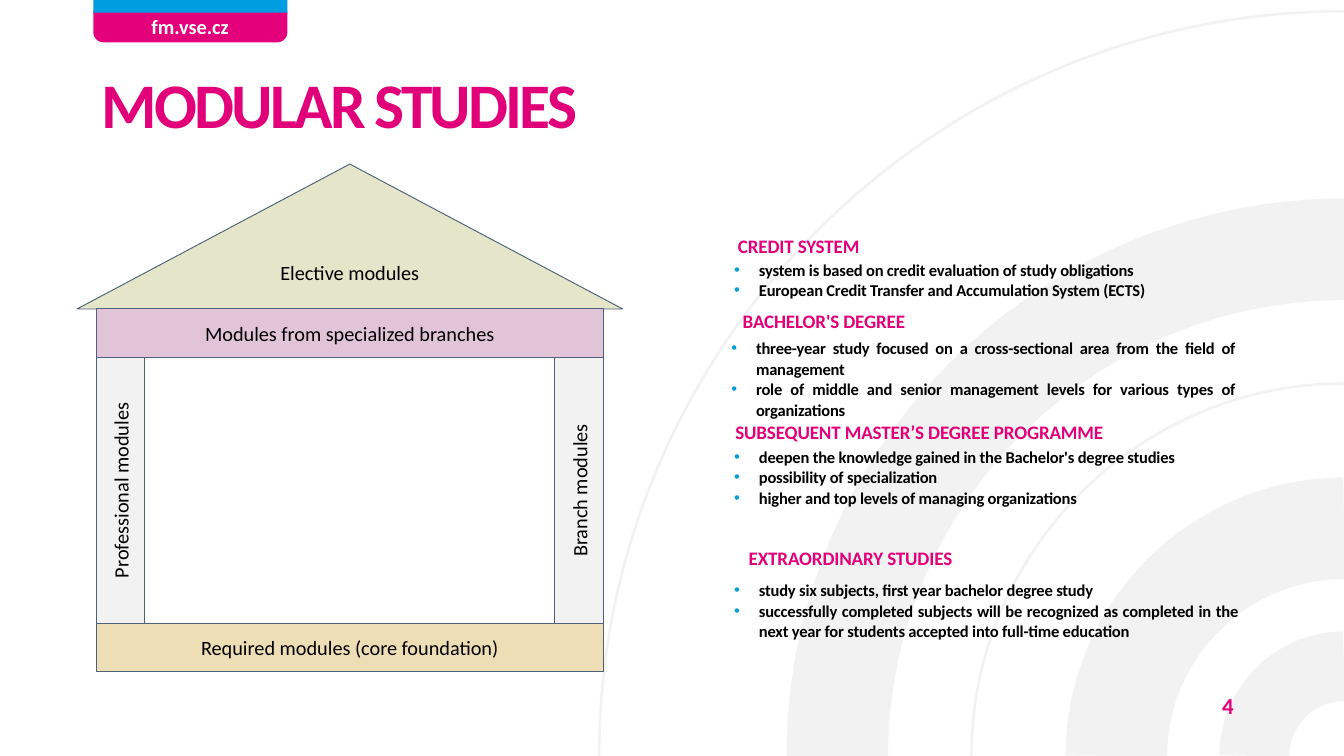
from typing import NamedTuple

from lxml.etree import SubElement
from pptx import Presentation
from pptx.dml.color import RGBColor
from pptx.enum.shapes import MSO_SHAPE as Preset
from pptx.enum.text import MSO_ANCHOR as Anchor, MSO_AUTO_SIZE as AutoSize, PP_ALIGN as Align
from pptx.oxml.ns import qn
from pptx.util import Emu, Inches, Pt

SLIDE_WIDTH, SLIDE_HEIGHT = Inches(14.7), Inches(8.27)
# Positions are in columns and rows: hundredths of the slide's width and height.
COLUMN, ROW = SLIDE_WIDTH / 100, SLIDE_HEIGHT / 100
FONT = "Calibri"
COLORS = {
    "magenta": "E3007A", "heading": "E2007A", "blue": "009EE0", "bullet": "009FD6",
    "gray": "F2F2F2", "outline": "4E607A", "roof": "E4E5C9", "upper": "E2C4D8",
    "base": "EDDEB5", "black": "000000", "white": "FFFFFF",
}


class Box(NamedTuple):
    left: float
    top: float
    width: float
    height: float

    def emu(self) -> tuple[Emu, ...]:
        return tuple(Emu(round(value * unit)) for value, unit in zip(self, (COLUMN, ROW) * 2))


class Arc(NamedTuple):
    radius: float  # in columns
    thickness: float


class HousePart(NamedTuple):
    label: str
    preset: Preset
    box: Box
    color: str
    vertical: bool = False


class Section(NamedTuple):
    heading: str
    heading_at: tuple[float, float]
    list_at: tuple[float, float]
    line_count: int
    items: list[str]


ARCS = [Arc(55.42, 2), Arc(27.72, 2), Arc(37.7, 80), Arc(16.94, 80), Arc(6.67, 55)]
CURVE_HANDLE = 0.55  # share of the radius that rounds a quarter circle

HOUSE_LEFT, HOUSE_TOP, HOUSE_WIDTH = 7.16, 40.87, 37.74
BEAM_HEIGHT, PILLAR_WIDTH, PILLAR_HEIGHT = 6.41, 3.61, 35.19
ROOF_HEIGHT, EAVES = 19.17, 1.43
PILLAR_TOP = HOUSE_TOP + BEAM_HEIGHT
HOUSE = [
    HousePart("Elective modules", Preset.ISOSCELES_TRIANGLE,
              Box(HOUSE_LEFT - EAVES, HOUSE_TOP - ROOF_HEIGHT,
                  HOUSE_WIDTH + 2 * EAVES, ROOF_HEIGHT), "roof"),
    HousePart("Modules from specialized branches", Preset.RECTANGLE,
              Box(HOUSE_LEFT, HOUSE_TOP, HOUSE_WIDTH, BEAM_HEIGHT), "upper"),
    HousePart("Required modules (core foundation)", Preset.RECTANGLE,
              Box(HOUSE_LEFT, PILLAR_TOP + PILLAR_HEIGHT, HOUSE_WIDTH, BEAM_HEIGHT), "base"),
    HousePart("Professional modules", Preset.RECTANGLE,
              Box(HOUSE_LEFT, PILLAR_TOP, PILLAR_WIDTH, PILLAR_HEIGHT), "gray", True),
    HousePart("Branch modules", Preset.RECTANGLE,
              Box(HOUSE_LEFT + HOUSE_WIDTH - PILLAR_WIDTH, PILLAR_TOP,
                  PILLAR_WIDTH, PILLAR_HEIGHT), "gray", True),
]

SECTION_WIDTH, HEADING_HEIGHT, LINE_HEIGHT, LIST_PADDING = 38.84, 3.99, 2.72, 1.21
SECTIONS = [
    Section("CREDIT SYSTEM", (53.95, 31.12), (53.95, 33.62), 2, [
        "system is based on credit evaluation of study obligations",
        "European Credit Transfer and Accumulation System (ECTS)"]),
    Section("BACHELOR'S DEGREE", (54.31, 41.03), (53.74, 44.01), 4, [
        "three-year study focused on a cross-sectional area from the field of management",
        "role of middle and senior management levels for various types of organizations"]),
    Section("SUBSEQUENT MASTER’S DEGREE PROGRAMME", (53.76, 55.7), (53.95, 58.4), 3, [
        "deepen the knowledge gained in the Bachelor's degree studies",
        "possibility of specialization",
        "higher and top levels of managing organizations"]),
    Section("EXTRAORDINARY STUDIES", (54.76, 72.35), (53.95, 76.04), 3, [
        "study six subjects, first year bachelor degree study",
        "successfully completed subjects will be recognized as completed in the next year "
        "for students accepted into full-time education"]),
]


def rgb(name: str) -> RGBColor:
    return RGBColor.from_string(COLORS[name])


def add_bullet(paragraph) -> None:
    properties = paragraph._p.get_or_add_pPr()
    properties.set("marL", str(Inches(0.27)))
    properties.set("indent", str(-Inches(0.27)))
    bullet_color = SubElement(properties, qn("a:buClr"))
    SubElement(bullet_color, qn("a:srgbClr")).set("val", COLORS["bullet"])
    SubElement(properties, qn("a:buFont")).set("typeface", "Arial")
    SubElement(properties, qn("a:buChar")).set("char", "•")


def write_text(shape, *lines: str, size: float, color: str = "black", bold: bool = True,
               align: Align = Align.LEFT, anchor: Anchor = Anchor.TOP, tracking: float = 0,
               line_spacing=None, margins: tuple[float, float] = (0.1, 0.05),
               bullets: bool = False, vertical: bool = False) -> None:
    """Fill a shape with paragraphs; margins are horizontal and vertical inches."""
    frame = shape.text_frame
    frame.word_wrap = True
    frame.auto_size = AutoSize.NONE
    frame.vertical_anchor = anchor
    frame.margin_left = frame.margin_right = Inches(margins[0])
    frame.margin_top = frame.margin_bottom = Inches(margins[1])
    if vertical:
        frame._txBody.bodyPr.set("vert", "vert270")
    for index, line in enumerate(lines):
        paragraph = frame.add_paragraph() if index else frame.paragraphs[0]
        if bullets:
            add_bullet(paragraph)
        paragraph.alignment = align
        paragraph.space_before = Pt(0)
        paragraph.line_spacing = line_spacing
        run = paragraph.add_run()
        run.text = line
        run.font.name, run.font.size, run.font.bold = FONT, Pt(size), bold
        run.font.color.rgb = rgb(color)
        if tracking:
            run._r.get_or_add_rPr().set("spc", str(round(tracking * 100)))


def add_arc(slide, arc: Arc) -> None:
    """Draw a quarter circle around the slide's bottom right corner as one Bézier curve."""
    radius = arc.radius * COLUMN
    left, top = SLIDE_WIDTH - radius, SLIDE_HEIGHT - radius
    handle = radius * CURVE_HANDLE
    builder = slide.shapes.build_freeform(left, SLIDE_HEIGHT)
    builder.add_line_segments([(left, SLIDE_HEIGHT - handle), (SLIDE_WIDTH - handle, top),
                               (SLIDE_WIDTH, top)], close=False)
    shape = builder.convert_to_shape()
    segments = list(shape.element.iter(qn("a:lnTo")))
    outline = segments[0].getparent()
    curve = SubElement(outline, qn("a:cubicBezTo"))
    for segment in segments:
        curve.append(segment[0])
        outline.remove(segment)
    shape.shadow.inherit = False
    shape.fill.background()
    shape.line.color.rgb = rgb("gray")
    shape.line.width = Pt(arc.thickness)


def add_block(slide, preset: Preset, box: Box, color: str, outlined: bool = False):
    shape = slide.shapes.add_shape(preset, *box.emu())
    shape.shadow.inherit = False
    shape.fill.solid()
    shape.fill.fore_color.rgb = rgb(color)
    if outlined:
        shape.line.color.rgb = rgb("outline")
        shape.line.width = Pt(0.75)
    else:
        shape.line.fill.background()
    return shape


def place(placeholder, box: Box) -> None:
    """Move a placeholder and bring it to the front."""
    placeholder.left, placeholder.top, placeholder.width, placeholder.height = box.emu()
    placeholder.element.getparent().append(placeholder.element)


def add_section(slide, section: Section, body) -> None:
    heading = slide.shapes.add_textbox(
        *Box(*section.heading_at, SECTION_WIDTH, HEADING_HEIGHT).emu())
    write_text(heading, section.heading, size=15, color="heading", tracking=-0.11,
               line_spacing=Pt(11.8), margins=(0.14, 0.08))
    place(body, Box(*section.list_at, SECTION_WIDTH,
                    section.line_count * LINE_HEIGHT + LIST_PADDING))
    write_text(body, *section.items, size=13, tracking=-0.13, align=Align.JUSTIFY,
               line_spacing=Pt(16.2), bullets=True)


def main() -> None:
    presentation = Presentation()
    presentation.slide_width, presentation.slide_height = SLIDE_WIDTH, SLIDE_HEIGHT
    slide = presentation.slides.add_slide(presentation.slide_layouts.get_by_name("Comparison"))
    title, *bodies = slide.placeholders

    for arc in ARCS:
        add_arc(slide, arc)

    tab = add_block(slide, Preset.ROUNDED_RECTANGLE, Box(6.94, 0.36, 14.45, 5.24), "magenta")
    tab.adjustments[0] = 0.26
    add_block(slide, Preset.RECTANGLE, Box(6.94, 0, 14.45, 1.69), "blue")
    address = slide.shapes.add_textbox(*Box(7.07, 1.33, 14.15, 5.32).emu())
    write_text(address, "fm.vse.cz", size=16, color="white", align=Align.CENTER)

    place(title, Box(6.87, 9, 86.6, 10.4))
    write_text(title, "MODULAR STUDIES", size=50, color="heading", anchor=Anchor.BOTTOM,
               tracking=-2.2, line_spacing=0.9)
    page_number = slide.shapes.add_textbox(*Box(89.46, 90.93, 3.81, 4.84).emu())
    write_text(page_number, "4", size=18, color="magenta", align=Align.CENTER,
               anchor=Anchor.MIDDLE, tracking=-0.1)

    for section, body in zip(SECTIONS, bodies):
        add_section(slide, section, body)

    for part in HOUSE:
        shape = add_block(slide, part.preset, part.box, part.color, outlined=True)
        write_text(shape, part.label, size=16, bold=False, align=Align.CENTER,
                   anchor=Anchor.MIDDLE, margins=(0.15, 0.07), vertical=part.vertical)

    presentation.save("out.pptx")


if __name__ == "__main__":
    main()
